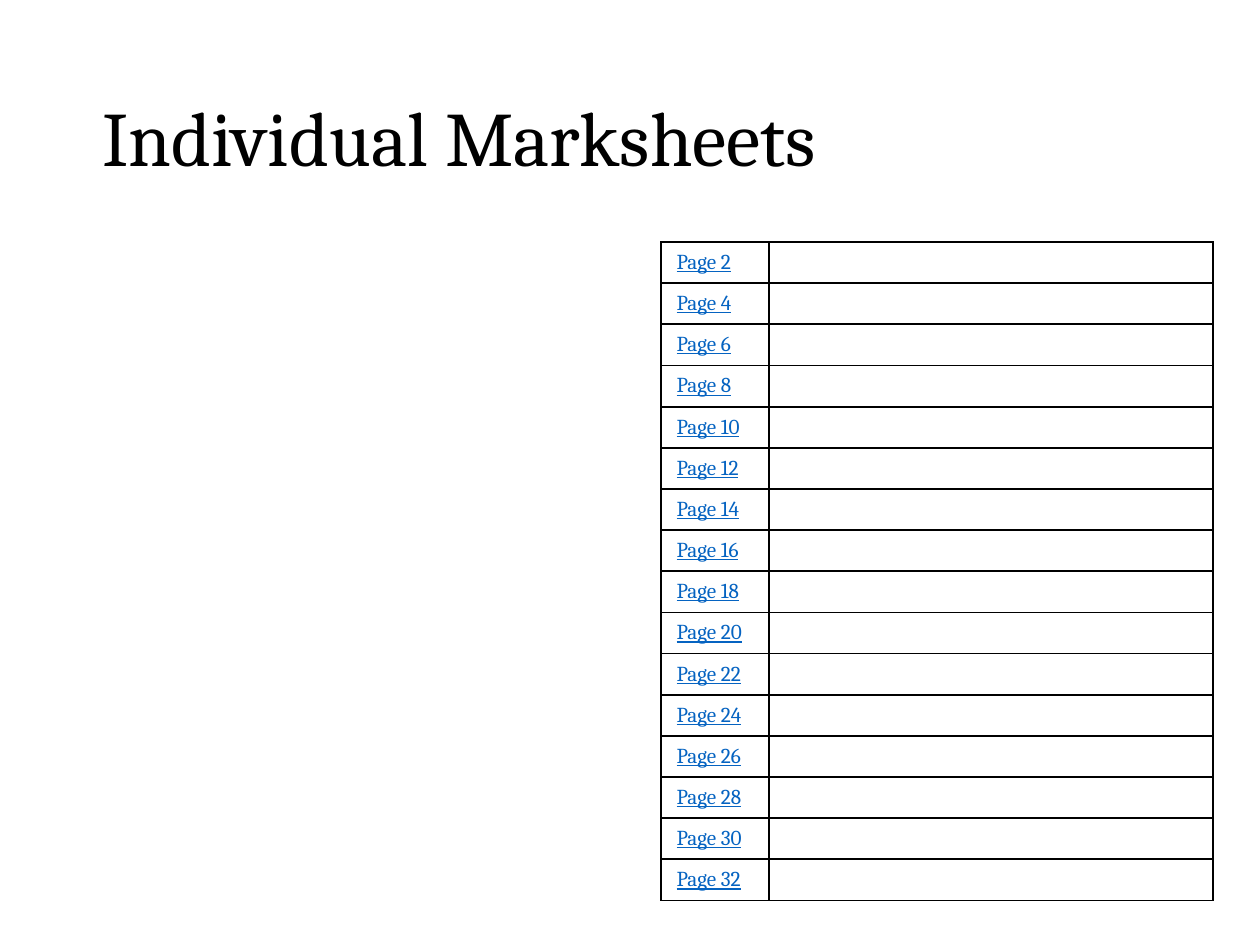
from lxml import etree
from pptx import Presentation
from pptx.dml.color import RGBColor
from pptx.enum import text as t
from pptx.oxml import ns
from pptx.util import Pt

FACE = "Cambria"
INK = "000000"
LINK = "0563C1"
PAPER = "FFFFFF"
PAGES = range(2, 33, 2)


def paint(fill, tint):
    """Give a fill a solid colour from a hex string."""
    fill.solid()
    fill.fore_color.rgb = RGBColor.from_string(tint)


def style(para, size, tint, under=None):
    """Format every run of a paragraph."""
    for run in para.runs:
        run.font.name = FACE
        run.font.size = Pt(size)
        run.font.underline = under
        paint(run.font.fill, tint)


def frame(cell, tint, width):
    """Draw the four borders of a table cell."""
    props = cell._tc.get_or_add_tcPr()
    for side in ("lnL", "lnR", "lnT", "lnB"):
        line = etree.SubElement(props, ns.qn(f"a:{side}"), w=str(Pt(width)))
        fill = etree.SubElement(line, ns.qn("a:solidFill"))
        etree.SubElement(fill, ns.qn("a:srgbClr"), val=tint)


def fill_cell(cell, words):
    """Set the text, borders and fill of a cell."""
    frame(cell, INK, 1)
    paint(cell.fill, PAPER)
    cell.margin_top = cell.margin_bottom = Pt(2)
    cell.vertical_anchor = t.MSO_ANCHOR.MIDDLE
    para = cell.text_frame.paragraphs[0]
    if words:
        para.text = words
        style(para, 10, LINK, True)
    else:
        etree.SubElement(para._p, ns.qn("a:endParaRPr"), sz="1000")


def add_title(slide, words):
    """Place and format the title."""
    title = slide.shapes.title
    title.left, title.top = Pt(41), Pt(23.8)
    title.width, title.height = Pt(511), Pt(85.7)
    box = title.text_frame
    box.text = words
    box.word_wrap = True
    box.auto_size = t.MSO_AUTO_SIZE.NONE
    box.vertical_anchor = t.MSO_ANCHOR.MIDDLE
    para = box.paragraphs[0]
    para.alignment = t.PP_ALIGN.LEFT
    para.line_spacing = 0.9
    style(para, 36.2, INK)


def add_index(slide, pages):
    """Build the page index with an empty second column."""
    high = 19.37
    holder = slide.shapes.add_table(
        len(pages), 2, Pt(311), Pt(113.8), Pt(259.6), Pt(high * len(pages)))
    table = holder.table
    table.first_row = table.horz_banding = False
    for col, width in zip(table.columns, (50.6, 209)):
        col.width = Pt(width)
    for r, page in enumerate(pages):
        table.rows[r].height = Pt(high)
        for c, words in enumerate((f"Page {page}", "")):
            fill_cell(table.cell(r, c), words)


def main():
    """Build and save the slide."""
    deck = Presentation()
    deck.slide_width, deck.slide_height = Pt(592.56), Pt(444.96)
    slide = deck.slides.add_slide(deck.slide_layouts[5])
    add_title(slide, "Individual Marksheets")
    add_index(slide, PAGES)
    deck.save("out.pptx")


if __name__ == "__main__":
    main()
